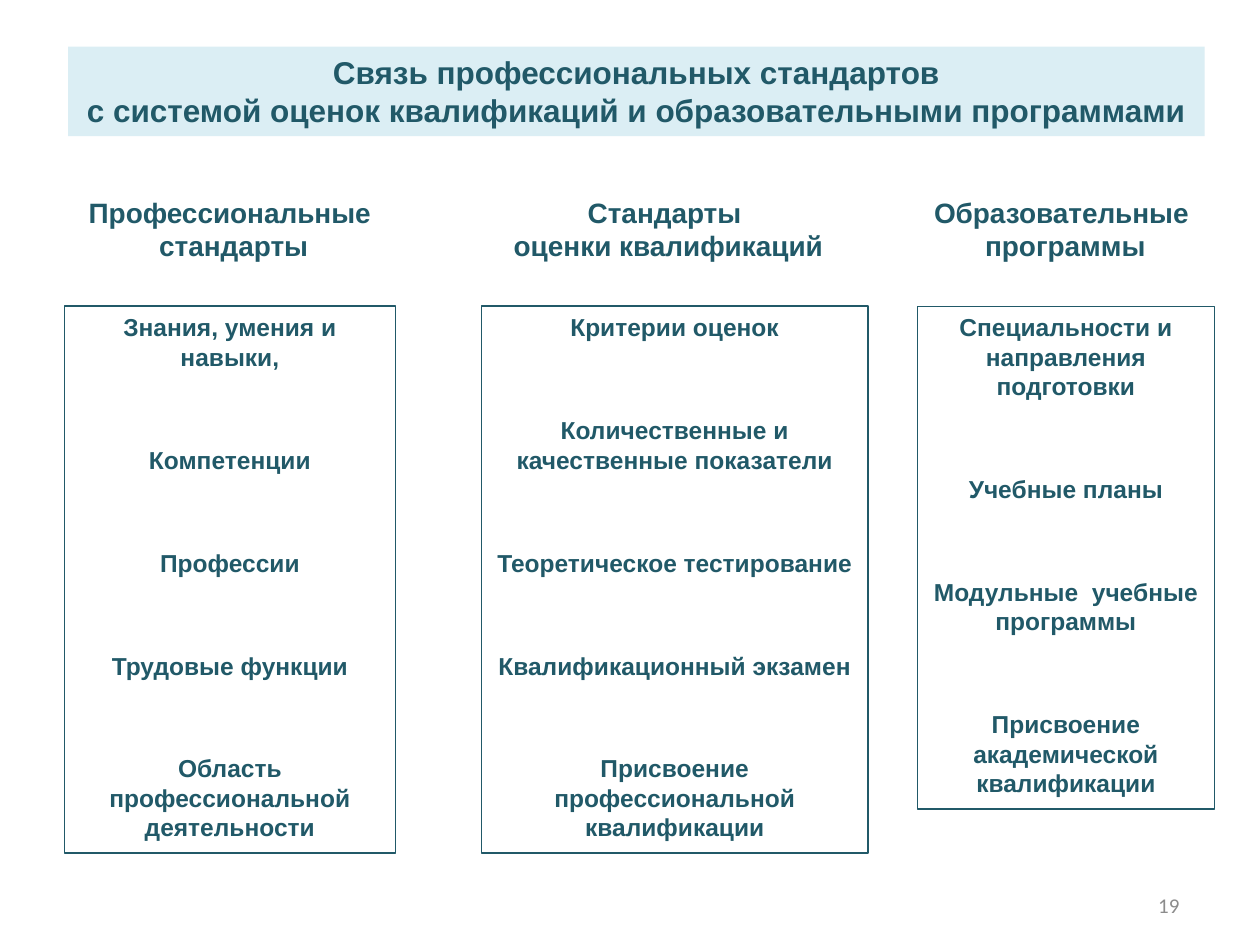
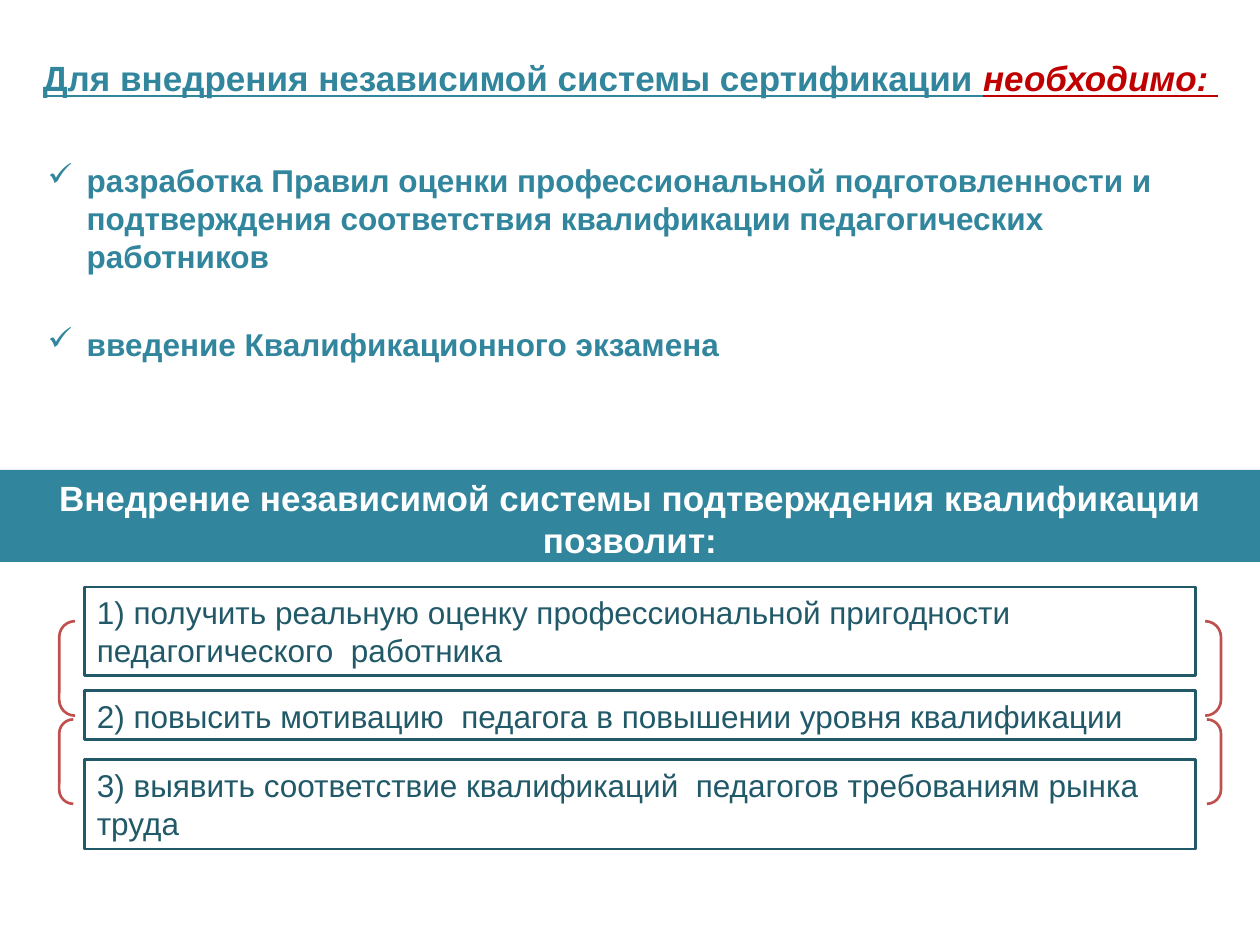
import pptx
import pptx.dml.color
import pptx.enum.shapes
import pptx.enum.text
import pptx.oxml.ns
import pptx.util
from lxml import etree
from pptx.util import Inches

DARK_TEAL = "215968"
TEAL = "31859C"
PALE_BLUE = "DBEEF4"
RED = "C00000"
BRACKET_RED = "C0504D"
WHITE = "FFFFFF"
GREY = "8C8C8C"

RECTANGLE = pptx.enum.shapes.MSO_SHAPE.RECTANGLE
BRACKETS = pptx.enum.shapes.MSO_SHAPE.DOUBLE_BRACKET
LEFT = pptx.enum.text.PP_ALIGN.LEFT
CENTER = pptx.enum.text.PP_ALIGN.CENTER
RIGHT = pptx.enum.text.PP_ALIGN.RIGHT
TOP = pptx.enum.text.MSO_ANCHOR.TOP
MIDDLE = pptx.enum.text.MSO_ANCHOR.MIDDLE


def rgb(color):
    return pptx.dml.color.RGBColor.from_string(color)


class SlideBuilder:
    def __init__(self, presentation):
        self.presentation = presentation
        self.slide = None

    def new_slide(self):
        self.slide = self.presentation.slides.add_slide(self.presentation.slide_layouts[5])

    def set_text(self, shape, lines, size, color, bold=True, align=CENTER, gap=0,
                 anchor=TOP, wrap=True, font="Arial"):
        text_frame = shape.text_frame
        text_frame.auto_size = pptx.enum.text.MSO_AUTO_SIZE.NONE
        text_frame.word_wrap = wrap
        text_frame.vertical_anchor = anchor
        text_frame.text = "\n".join(lines)
        for index, paragraph in enumerate(text_frame.paragraphs):
            paragraph.alignment = align
            paragraph.space_before = pptx.util.Pt(gap if index else 0)
            for run in paragraph.runs:
                run.font.name = font
                run.font.size = pptx.util.Pt(size)
                run.font.bold = bold
                run.font.color.rgb = rgb(color)

    def title(self, left, top, width, height, lines, size, color, fill=None):
        shape = self.slide.shapes.title
        shape.left, shape.top = Inches(left), Inches(top)
        shape.width, shape.height = Inches(width), Inches(height)
        if fill:
            shape.fill.solid()
            shape.fill.fore_color.rgb = rgb(fill)
        self.set_text(shape, lines, size, color, wrap=False)
        return shape

    def text(self, left, top, width, height, lines, size, color, **style):
        shape = self.slide.shapes.add_textbox(
            Inches(left), Inches(top), Inches(width), Inches(height))
        self.set_text(shape, lines, size, color, **style)
        return shape

    def shape(self, kind, left, top, width, height, fill=None, line=None, line_width=1.5):
        shape = self.slide.shapes.add_shape(
            kind, Inches(left), Inches(top), Inches(width), Inches(height))
        shape.shadow.inherit = False
        if fill:
            shape.fill.solid()
            shape.fill.fore_color.rgb = rgb(fill)
        else:
            shape.fill.background()
        if line:
            shape.line.color.rgb = rgb(line)
            shape.line.width = pptx.util.Pt(line_width)
        else:
            shape.line.fill.background()
        return shape

    def checklist(self, left, top, width, height, items, size, color, gap):
        shape = self.text(left, top, width, height, items, size, color, align=LEFT, gap=gap)
        for paragraph in shape.text_frame.paragraphs:
            properties = paragraph._p.get_or_add_pPr()
            properties.set("marL", str(Inches(0.31)))
            properties.set("indent", str(Inches(-0.31)))
            bullet = etree.SubElement(properties, pptx.oxml.ns.qn("a:buChar"))
            bullet.set("char", "✓")


def build_standards_slide(builder):
    builder.new_slide()
    builder.title(0.54, 0.37, 9.02, 0.71,
                  ["Связь профессиональных стандартов",
                   "с системой оценок квалификаций и образовательными программами"],
                  18, DARK_TEAL, fill=PALE_BLUE)
    columns = [
        (0.59, 2.53, ["Профессиональные ", "стандарты"], 0.51, 2.63, 4.34,
         ["Знания, умения и навыки,", "Компетенции", "Профессии", "Трудовые функции",
          "Область профессиональной деятельности"]),
        (3.96, 2.69, ["Стандарты ", "оценки квалификаций"], 3.82, 3.07, 4.34,
         ["Критерии оценок", "Количественные и качественные показатели",
          "Теоретическое тестирование", "Квалификационный экзамен",
          "Присвоение профессиональной квалификации"]),
        (7.3, 2.31, ["Образовательные ", "программы"], 7.28, 2.36, 3.99,
         ["Специальности и направления подготовки", "Учебные планы",
          "Модульные  учебные программы", "Присвоение академической квалификации"]),
    ]
    for heading_left, heading_width, heading, left, width, height, items in columns:
        builder.text(heading_left, 1.5, heading_width, 0.64, heading, 16, DARK_TEAL, wrap=False)
        box = builder.shape(RECTANGLE, left, 2.43, width, height, line=DARK_TEAL, line_width=0.75)
        builder.set_text(box, items, 14, DARK_TEAL, gap=42)
    builder.text(7.13, 6.98, 2.33, 0.4, ["19"], 12, GREY, bold=False, align=RIGHT,
                 anchor=MIDDLE, font="Calibri")


def build_certification_slide(builder):
    builder.new_slide()
    title = builder.title(0.2, 0.4, 9.61, 0.44,
                          ["Для внедрения независимой системы сертификации "], 20, TEAL)
    paragraph = title.text_frame.paragraphs[0]
    emphasis = paragraph.add_run()
    emphasis.text = "необходимо: "
    emphasis.font.name = "Arial"
    emphasis.font.size = pptx.util.Pt(20)
    emphasis.font.bold = True
    emphasis.font.italic = True
    emphasis.font.color.rgb = rgb(RED)
    for run in paragraph.runs:
        run.font.underline = True

    builder.checklist(0.28, 1.23, 9.45, 1.74,
                      ["разработка Правил оценки профессиональной подготовленности и "
                       "подтверждения соответствия квалификации педагогических работников",
                       "введение Квалификационного экзамена"],
                      18, TEAL, gap=29)

    benefits = [
        (4.66, 0.7, "1) получить реальную оценку профессиональной пригодности "
                    "педагогического  работника"),
        (5.48, 0.39, "2) повысить мотивацию  педагога в повышении уровня квалификации"),
        (6.03, 0.71, "3) выявить соответствие квалификаций  педагогов требованиям рынка труда"),
    ]
    for top, height, benefit in benefits:
        box = builder.shape(RECTANGLE, 0.67, top, 8.82, height, line=DARK_TEAL)
        builder.set_text(box, [benefit], 18, DARK_TEAL, bold=False, align=LEFT)
    for top, height in [(4.93, 0.75), (5.71, 0.67)]:
        builder.shape(BRACKETS, 0.47, top, 9.22, height, line=BRACKET_RED)

    band = builder.shape(RECTANGLE, 0, 3.73, 10, 0.73, fill=TEAL)
    builder.set_text(band, ["Внедрение независимой системы подтверждения квалификации позволит:"],
                     20, WHITE)


def main():
    presentation = pptx.Presentation()
    presentation.slide_width = Inches(10)
    presentation.slide_height = Inches(7.5)
    builder = SlideBuilder(presentation)
    build_standards_slide(builder)
    build_certification_slide(builder)
    presentation.save("out.pptx")


if __name__ == "__main__":
    main()
